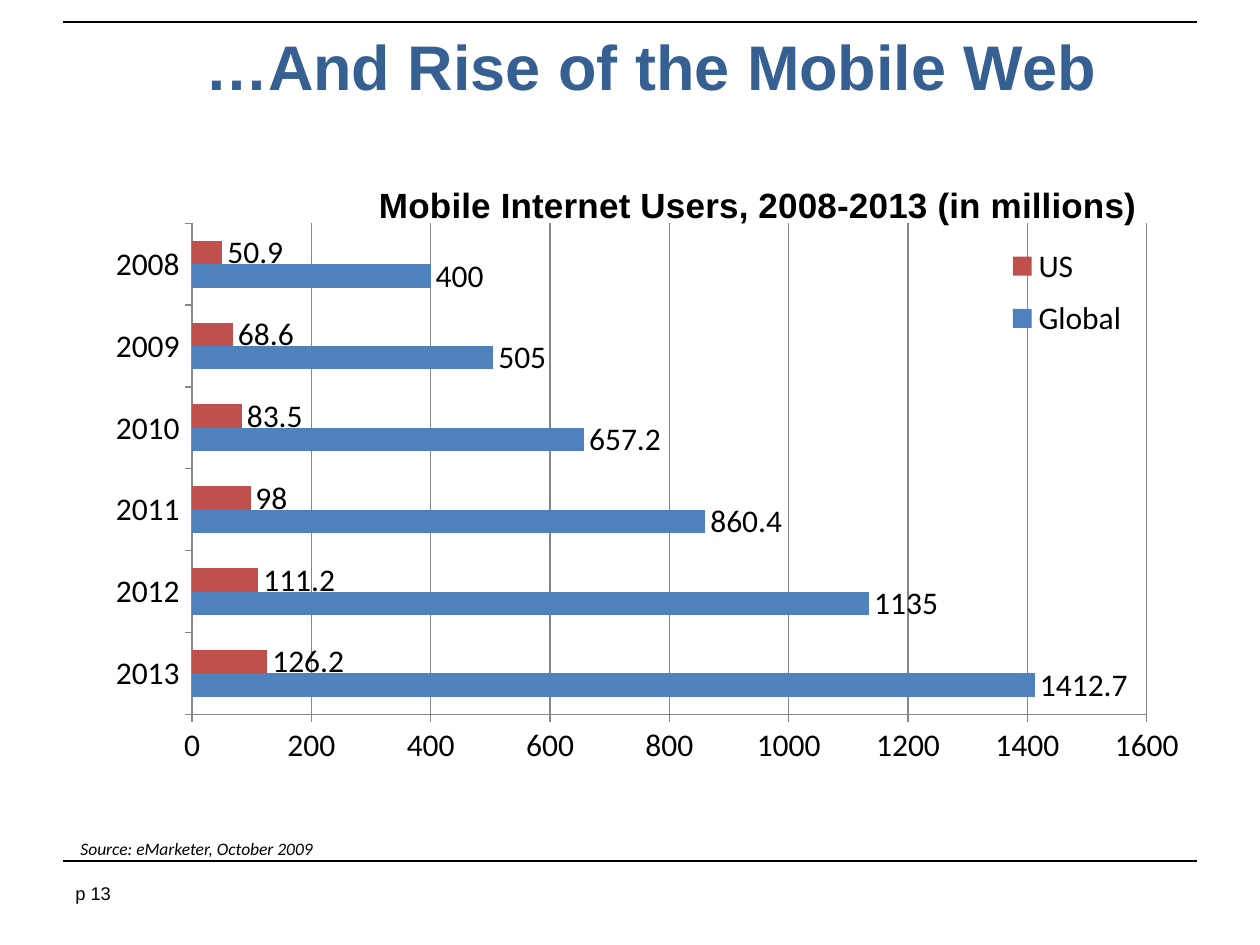
from lxml import etree
from pptx import Presentation
from pptx.chart.data import CategoryChartData as Data
from pptx.dml.color import RGBColor as RGB
from pptx.enum.chart import XL_CHART_TYPE as Kind, XL_LABEL_POSITION as Spot
from pptx.enum.chart import XL_LEGEND_POSITION as Side, XL_TICK_MARK as Tick
from pptx.enum.shapes import MSO_CONNECTOR as Conn
from pptx.enum.text import MSO_ANCHOR as Anchor, PP_ALIGN as Align
from pptx.oxml import parse_xml
from pptx.oxml.ns import qn
from pptx.util import Inches, Pt

WIDE, HIGH = 10, 7.5
INK = {"text": "000000", "title": "376092", "grid": "868686",
       "Global": "4F81BD", "US": "C0504D"}
YEARS = ["2013", "2012", "2011", "2010", "2009", "2008"]
USERS = {"Global": [1412.7, 1135, 860.4, 657.2, 505, 400],
         "US": [126.2, 111.2, 98, 83.5, 68.6, 50.9]}
CHART_NS = "http://schemas.openxmlformats.org/drawingml/2006/chart"


def place(x, y, w, h):
    """Turn shares of the slide into lengths."""
    return [Inches(x * WIDE), Inches(y * HIGH), Inches(w * WIDE), Inches(h * HIGH)]


def style(font, size, face, ink="text", bold=False, italic=False):
    font.size, font.name = Pt(size), face
    font.bold, font.italic = bold, italic
    font.color.rgb = RGB.from_string(INK[ink])


def add_text(slide, box, words, size, face, align=Align.LEFT,
             anchor=Anchor.TOP, pad=None, lead=None, **look):
    frame = slide.shapes.add_textbox(*place(*box)).text_frame
    frame.word_wrap = True
    frame.vertical_anchor = anchor
    if pad is not None:
        frame.margin_left = frame.margin_right = Inches(pad)
        frame.margin_top = frame.margin_bottom = Inches(pad)
    para = frame.paragraphs[0]
    para.alignment, para.line_spacing = align, lead
    run = para.add_run()
    run.text = words
    style(run.font, size, face, **look)


def add_rule(slide, y):
    """Draw a thin line between the side margins."""
    left, top, wide, _ = place(0.05, y, 0.9, 0)
    rule = slide.shapes.add_connector(Conn.STRAIGHT, left, top, left + wide, top)
    rule.line.color.rgb = RGB.from_string(INK["text"])
    rule.line.width = Pt(1)
    etree.SubElement(rule._element.spPr, qn("a:effectLst"))


def pin(part, index, inner=False, **spots):
    """Fix a chart part at shares of the chart's box."""
    for old in part.findall(qn("c:layout")):
        part.remove(old)
    target = '<c:layoutTarget val="inner"/>' if inner else ""
    modes = "".join(f'<c:{key}Mode val="edge"/>' for key in "xy")
    sizes = "".join(f'<c:{key} val="{val}"/>' for key, val in spots.items())
    part.insert(index, parse_xml(
        f'<c:layout xmlns:c="{CHART_NS}"><c:manualLayout>'
        f"{target}{modes}{sizes}</c:manualLayout></c:layout>"))


def set_axes(chart):
    value = chart.value_axis
    value.minimum_scale, value.maximum_scale, value.major_unit = 0, 1600, 200
    value.has_major_gridlines = True
    for axis in (value, chart.category_axis):
        axis.major_tick_mark, axis.minor_tick_mark = Tick.OUTSIDE, Tick.NONE
    for part in (value, chart.category_axis, value.major_gridlines):
        part.format.line.color.rgb = RGB.from_string(INK["grid"])
        part.format.line.width = Pt(0.75)


def set_bars(plot):
    plot.gap_width, plot.overlap, plot.vary_by_categories = 150, 0, False
    for series in plot.series:
        series.format.fill.solid()
        series.format.fill.fore_color.rgb = RGB.from_string(INK[series.name])
        labels = series.data_labels
        labels.show_value = True
        labels.position = Spot.OUTSIDE_END
        style(labels.font, 18, "Calibri")


def add_users(slide, box):
    """Add the bar chart of mobile users."""
    data = Data(number_format="General")
    data.categories = YEARS
    for name, values in USERS.items():
        data.add_series(name, values)
    chart = slide.shapes.add_chart(Kind.BAR_CLUSTERED, *place(*box), data).chart
    style(chart.font, 18, "Calibri")
    set_axes(chart)
    set_bars(chart.plots[0])
    pin(chart._chartSpace.chart.plotArea, 0, True, x=0.095, y=0.085, w=0.873, h=0.784)

    chart.has_title = True
    title = chart.chart_title
    run = title.text_frame.paragraphs[0].add_run()
    run.text = "Mobile Internet Users, 2008-2013 (in millions)"
    style(run.font, 20, "Arial", bold=True)
    pin(title._element, 1, x=0.26, y=0.01)

    chart.has_legend = True
    legend = chart.legend
    legend.position, legend.include_in_layout = Side.RIGHT, False
    style(legend.font, 18, "Calibri")
    pin(legend._element, 1, x=0.83, y=0.1, w=0.13, h=0.19)


def add_frame(slide):
    """Add the two rules, the heading and the footer."""
    for y in (0.023, 0.911):
        add_rule(slide, y)
    add_text(slide, (0.1, 0.033, 0.833, 0.113), "…And Rise of the Mobile Web", 36,
             "Arial", Align.CENTER, pad=0.04, lead=0.9, ink="title", bold=True)
    add_text(slide, (0.054, 0.883, 0.229, 0.033), "Source: eMarketer, October 2009",
             10, "Calibri", anchor=Anchor.BOTTOM, lead=0.9, italic=True)
    add_text(slide, (0.05, 0.927, 0.233, 0.053), "p 13", 10.5, "Arial")


def main():
    deck = Presentation()
    deck.slide_width, deck.slide_height = Inches(WIDE), Inches(HIGH)
    slide = deck.slides.add_slide(deck.slide_layouts[6])
    add_users(slide, (0.07, 0.18, 0.868, 0.663))
    add_frame(slide)
    deck.save("out.pptx")


if __name__ == "__main__":
    main()
